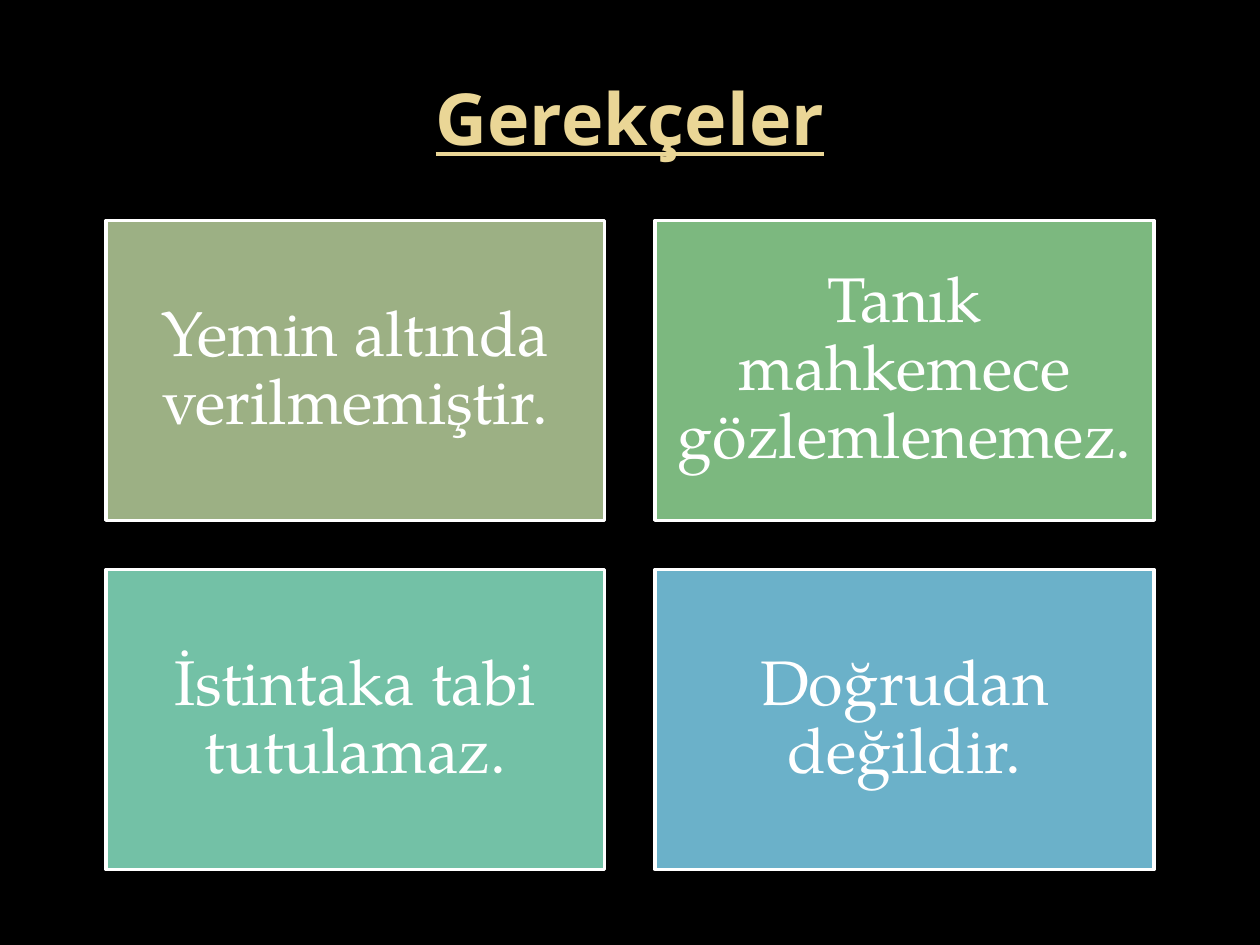
from pptx import Presentation
from pptx.dml.color import RGBColor
from pptx.enum.shapes import MSO_SHAPE
from pptx.enum.text import MSO_ANCHOR, PP_ALIGN
from pptx.util import Inches, Pt

# Content
TITLE = "Gerekçeler"
REASONS = [
    ("Yemin altında verilmemiştir.", "9CB084"),
    ("Tanık mahkemece gözlemlenemez.", "7CB87F"),
    ("İstintaka tabi tutulamaz.", "73C1A6"),
    ("Doğrudan değildir.", "6BB1C9"),
]

# Grid of cards, in inches
COLUMNS = 2
LEFT, TOP = 0.84, 1.75
CARD_WIDTH, CARD_HEIGHT = 3.96, 2.38
GAP_X, GAP_Y = 0.4, 0.39
PADDING = Inches(0.15)


def paint(fill, color):
    fill.solid()
    fill.fore_color.rgb = RGBColor.from_string(color)


def write(frame, text, font_name, size, color):
    frame.word_wrap = True
    frame.vertical_anchor = MSO_ANCHOR.MIDDLE
    paragraph = frame.paragraphs[0]
    paragraph.alignment = PP_ALIGN.CENTER
    run = paragraph.add_run()
    run.text = text
    run.font.name = font_name
    run.font.size = Pt(size)
    paint(run.font.fill, color)
    return paragraph, run


def add_card(slide, index, reason, color):
    row, column = divmod(index, COLUMNS)
    card = slide.shapes.add_shape(
        MSO_SHAPE.RECTANGLE,
        Inches(LEFT + column * (CARD_WIDTH + GAP_X)),
        Inches(TOP + row * (CARD_HEIGHT + GAP_Y)),
        Inches(CARD_WIDTH), Inches(CARD_HEIGHT))
    card.shadow.inherit = False
    paint(card.fill, color)
    paint(card.line.fill, "FFFFFF")
    card.line.width = Pt(2)
    frame = card.text_frame
    frame.margin_left = frame.margin_right = PADDING
    frame.margin_top = frame.margin_bottom = PADDING
    paragraph, _ = write(frame, reason, "TeX Gyre Pagella", 36, "FFFFFF")
    paragraph.line_spacing = 0.9


def main():
    deck = Presentation()
    deck.slide_width, deck.slide_height = Inches(10), Inches(7.5)
    slide = deck.slides.add_slide(deck.slide_layouts[5])
    paint(slide.background.fill, "000000")

    # Title
    title = slide.shapes.title
    title.left, title.top = Inches(0.5), Inches(0.3)
    title.width, title.height = Inches(9), Inches(1.25)
    _, heading = write(title.text_frame, TITLE, "Noto Sans", 41, "EAD696")
    heading.font.bold = True
    heading.font.underline = True

    # Cards
    for index, (reason, color) in enumerate(REASONS):
        add_card(slide, index, reason, color)

    deck.save("out.pptx")


if __name__ == "__main__":
    main()
